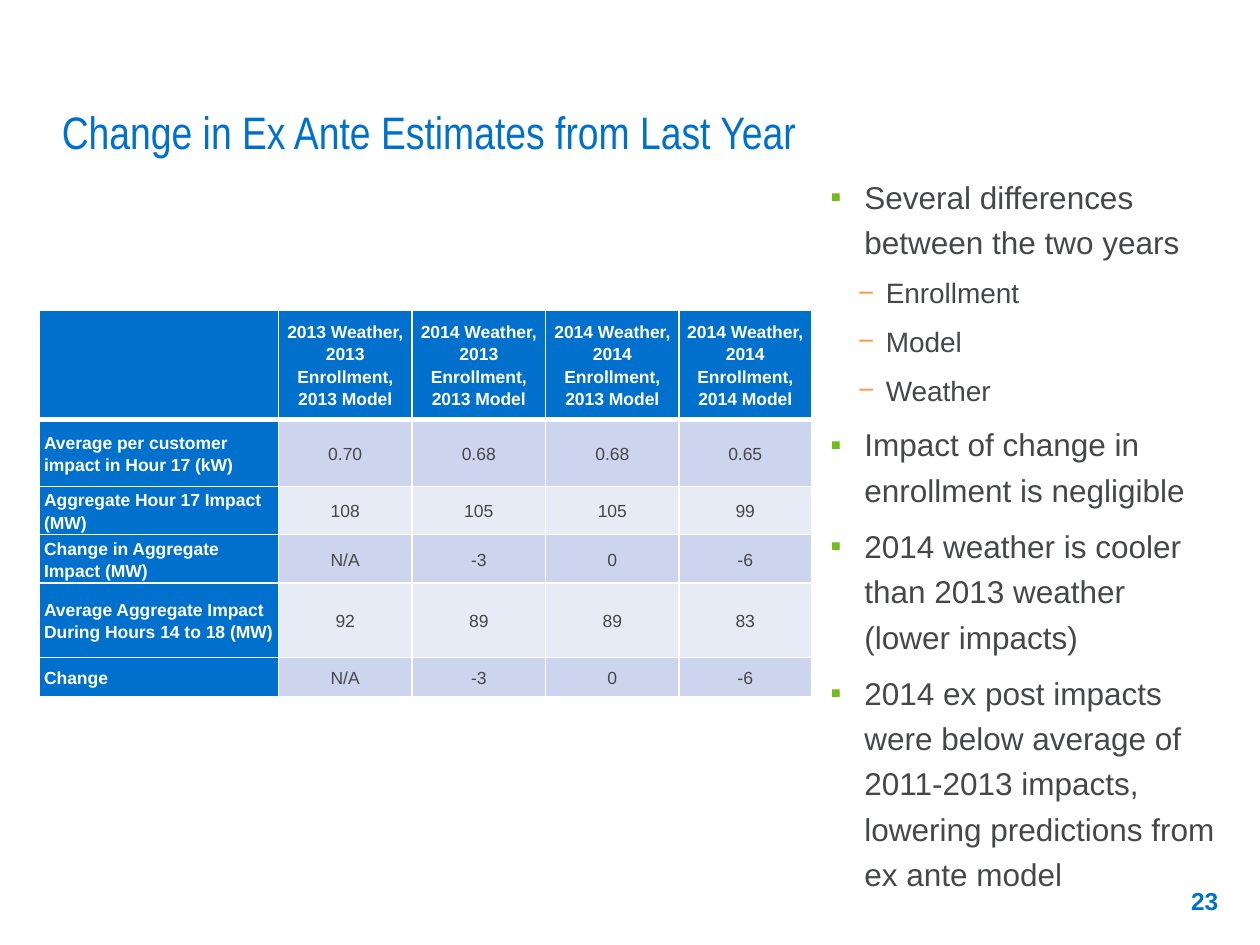
from dataclasses import dataclass

import pptx
import pptx.dml.color
import pptx.enum.text
import pptx.oxml.ns
import pptx.util
from lxml import etree

Inches = pptx.util.Inches
Pt = pptx.util.Pt
RGBColor = pptx.dml.color.RGBColor
ALIGN = pptx.enum.text.PP_ALIGN
ANCHOR = pptx.enum.text.MSO_ANCHOR
qn = pptx.oxml.ns.qn


@dataclass(frozen=True)
class Theme:
    blue: str = "0070CD"
    text: str = "464749"
    white: str = "FFFFFF"
    bands: tuple = ("CCD5ED", "E7EBF6")
    green: str = "77BC1F"
    orange: str = "FB9E4C"
    body_font: str = "Arial"
    title_font: str = "Arial Narrow"
    title_size: int = 26
    bullet_size: int = 18
    sub_bullet_size: int = 16
    number_size: int = 14
    table_size: int = 10


def set_all(obj, values):
    for name, value in values.items():
        setattr(obj, name, value)


def add_solid_fill(parent, color):
    fill = etree.SubElement(parent, qn("a:solidFill"))
    etree.SubElement(fill, qn("a:srgbClr"), val=color)


class SlideBuilder:
    def __init__(self, s, theme):
        self.s = s
        self.theme = theme

    def add_text(self, p, text, size, color, font=None, bold=False, **layout):
        set_all(p, layout)
        r = p.add_run()
        r.text = text
        set_all(r.font, {"name": font or self.theme.body_font,
                         "size": Pt(size), "bold": bold})
        r.font.color.rgb = RGBColor.from_string(color)

    def text_frame(self, box, insets, anchor=ANCHOR.TOP):
        """Add a wrapping text box; insets run left, top, right, bottom."""
        tf = self.s.shapes.add_textbox(*map(Inches, box)).text_frame
        sides = ("margin_left", "margin_top", "margin_right", "margin_bottom")
        set_all(tf, dict(zip(sides, map(Inches, insets))))
        set_all(tf, {"word_wrap": True, "vertical_anchor": anchor})
        return tf

    def label(self, box, insets, anchor, text, **style):
        tf = self.text_frame(box, insets, anchor)
        self.add_text(tf.paragraphs[0], text, **style)

    def bullet(self, p, char, color, left, hanging):
        pPr = p._p.get_or_add_pPr()
        indents = {"marL": Inches(left), "indent": -Inches(hanging)}
        for name, value in indents.items():
            pPr.set(name, str(value))
        clr = etree.SubElement(pPr, qn("a:buClr"))
        etree.SubElement(clr, qn("a:srgbClr"), val=color)
        etree.SubElement(pPr, qn("a:buFont"), typeface=self.theme.body_font)
        etree.SubElement(pPr, qn("a:buChar"), char=char)

    def bullets(self, box, insets, items):
        """Items are (level, text) pairs."""
        t = self.theme
        levels = [
            {"mark": ("▪", t.green, 0.27, 0.27), "size": t.bullet_size,
             "line_spacing": 1.2, "space_before": Pt(3.6)},
            {"mark": ("−", t.orange, 0.44, 0.22), "size": t.sub_bullet_size,
             "line_spacing": 1.3, "space_before": Pt(0.3)},
        ]
        tf = self.text_frame(box, insets)
        for i, (level, text) in enumerate(items):
            p = tf.add_paragraph() if i else tf.paragraphs[0]
            style = dict(levels[level], level=level, space_after=Pt(2.6))
            self.bullet(p, *style.pop("mark"))
            if i == 0:
                style["space_before"] = Pt(0)
            self.add_text(p, text, color=t.text, **style)

    def borders(self, cell, bottom):
        tcPr = cell._tc.get_or_add_tcPr()
        widths = {"a:lnL": 1, "a:lnR": 1, "a:lnT": 1, "a:lnB": bottom}
        for i, (tag, width) in enumerate(widths.items()):
            ln = etree.Element(qn(tag), w=str(Pt(width)))
            add_solid_fill(ln, self.theme.white)
            tcPr.insert(i, ln)

    def cell(self, cell, text, row, col):
        t = self.theme
        heading = row == 0 or col == 0
        cell.fill.solid()
        cell.fill.fore_color.rgb = RGBColor.from_string(
            t.blue if heading else t.bands[(row - 1) % 2])
        set_all(cell, {"margin_left": Inches(0.04), "margin_right": Inches(0.04),
                       "margin_top": 0, "margin_bottom": 0,
                       "vertical_anchor": ANCHOR.MIDDLE})
        layout = {"line_spacing": 1.15}
        if col:
            layout.update(alignment=ALIGN.CENTER, space_after=Pt(3))
        if text:
            self.add_text(cell.text_frame.paragraphs[0], text, t.table_size,
                          t.white if heading else t.text, bold=heading, **layout)
        self.borders(cell, 3 if row == 0 else 1)

    def table(self, box, widths, heights, rows):
        table = self.s.shapes.add_table(
            len(rows), len(widths), *map(Inches, box)).table
        for column, width in zip(table.columns, widths):
            column.width = Inches(width)
        for row, height in zip(table.rows, heights):
            row.height = Inches(height)
        for i, texts in enumerate(rows):
            for j, text in enumerate(texts):
                self.cell(table.cell(i, j), text, i, j)


IMPACTS = [
    ["", "2013 Weather, 2013 Enrollment, 2013 Model",
     "2014 Weather, 2013 Enrollment, 2013 Model",
     "2014 Weather, 2014 Enrollment, 2013 Model",
     "2014 Weather, 2014 Enrollment, 2014 Model"],
    ["Average per customer impact in Hour 17 (kW)", "0.70", "0.68", "0.68", "0.65"],
    ["Aggregate Hour 17 Impact (MW)", "108", "105", "105", "99"],
    ["Change in Aggregate Impact (MW)", "N/A", "-3", "0", "-6"],
    ["Average Aggregate Impact During Hours 14 to 18 (MW)", "92", "89", "89", "83"],
    ["Change", "N/A", "-3", "0", "-6"],
]

FINDINGS = [
    (0, "Several differences between the two years"),
    (1, "Enrollment"),
    (1, "Model"),
    (1, "Weather"),
    (0, "Impact of change in enrollment is negligible"),
    (0, "2014 weather is cooler than 2013 weather (lower impacts)"),
    (0, "2014 ex post impacts were below average of 2011-2013 impacts, "
        "lowering predictions from ex ante model"),
]


def main():
    prs = pptx.Presentation()
    set_all(prs, {"slide_width": Inches(10), "slide_height": Inches(7.5)})
    theme = Theme()
    slide = SlideBuilder(prs.slides.add_slide(prs.slide_layouts[6]), theme)

    body_insets = (0, 0.05, 0.1, 0.05)
    slide.bullets((6.59, 1.3, 3.17, 5.51), body_insets, FINDINGS)
    slide.table((0.31, 2.46, 6.12, 3.04), [1.9] + [1.06] * 3 + [1.05],
                [0.87, 0.53, 0.31, 0.31, 0.59, 0.31], IMPACTS)
    slide.label((0.49, 0.57, 9.01, 0.74), body_insets, ANCHOR.BOTTOM,
                "Change in Ex Ante Estimates from Last Year",
                size=theme.title_size, color=theme.blue, font=theme.title_font)
    slide.label((9.11, 6.95, 0.65, 0.4), (0.09, 0.04, 0.09, 0.04), ANCHOR.MIDDLE,
                "23", size=theme.number_size, color=theme.blue, bold=True,
                alignment=ALIGN.RIGHT)
    prs.save("out.pptx")


if __name__ == "__main__":
    main()
